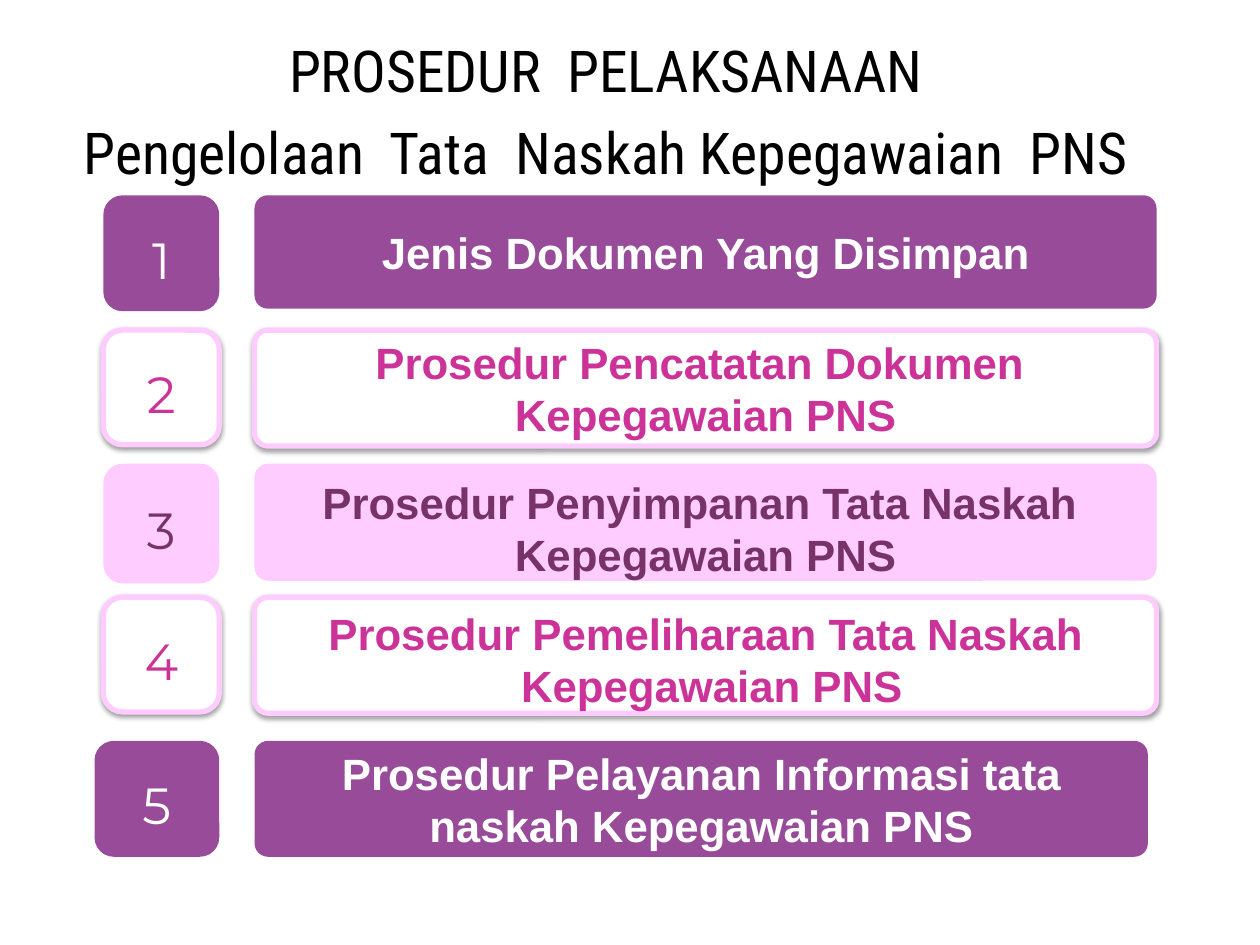
from lxml.etree import SubElement
from pptx import Presentation
from pptx.dml.color import RGBColor
from pptx.enum.shapes import MSO_SHAPE
from pptx.enum.text import MSO_ANCHOR, PP_ALIGN
from pptx.oxml.ns import qn
from pptx.util import Inches, Pt

BLACK = RGBColor(0x00, 0x00, 0x00)
WHITE = RGBColor(0xFF, 0xFF, 0xFF)
PURPLE = RGBColor(0x98, 0x4B, 0x99)
PINK = RGBColor(0xFF, 0xCC, 0xFF)
ROSE = RGBColor(0xCC, 0x33, 0x99)
PLUM = RGBColor(0x77, 0x33, 0x68)

# style: fill, text colour, outlined
DARK = (PURPLE, WHITE, False)
PALE = (PINK, PLUM, False)
OPEN = (WHITE, ROSE, True)

NUM_LEFT, NUM_WIDTH = 0.82, 0.92
BAR_LEFT, BAR_WIDTH = 2.02, 7.16

# top, number height, bar height, style, extra top inset, lines
STEPS = [
    (1.55, 0.92, 0.9, DARK, 0, ["Jenis Dokumen Yang Disimpan"]),
    (2.62, 0.91, 0.92, OPEN, 0,
     ["Prosedur Pencatatan Dokumen ", "Kepegawaian PNS"]),
    (3.68, 0.95, 0.93, PALE, 0.09,
     ["Prosedur Penyimpanan Tata Naskah ", "Kepegawaian PNS"]),
    (4.74, 0.91, 0.92, OPEN, 0.06,
     ["Prosedur Pemeliharaan Tata Naskah", " Kepegawaian PNS"]),
    (5.88, 0.92, 0.92, DARK, 0,
     ["Prosedur Pelayanan Informasi tata naskah Kepegawaian PNS"]),
]


def write(shape, lines, *, font, size, color, bold=False, spacing=None,
          anchor=MSO_ANCHOR.MIDDLE, inset=(0.1, 0.05), extra=0):
    frame = shape.text_frame
    frame.word_wrap = True
    frame.vertical_anchor = anchor
    side, edge = inset
    frame.margin_left = frame.margin_right = Inches(side)
    frame.margin_top = Inches(edge + extra)
    frame.margin_bottom = Inches(edge)
    for i, line in enumerate(lines):
        para = frame.add_paragraph() if i else frame.paragraphs[0]
        para.text = line
        para.alignment = PP_ALIGN.CENTER
        if spacing:
            para.line_spacing = spacing
        for run in para.runs:
            run.font.name = font
            run.font.size = Pt(size)
            run.font.bold = bold
            run.font.color.rgb = color


def add_shadow(shape):
    effects = shape._element.spPr.find(qn("a:effectLst"))
    outer = SubElement(effects, qn("a:outerShdw"), blurRad=str(Pt(3.1)),
                       dist=str(Pt(1.6)), dir="5400000", rotWithShape="0")
    color = SubElement(outer, qn("a:srgbClr"), val=str(BLACK))
    SubElement(color, qn("a:alpha"), val="38000")


def add_box(slide, left, top, width, height, curve, style):
    fill, _, outlined = style
    box = slide.shapes.add_shape(
        MSO_SHAPE.ROUNDED_RECTANGLE,
        Inches(left), Inches(top), Inches(width), Inches(height))
    box.adjustments[0] = curve
    box.shadow.inherit = False
    box.fill.solid()
    box.fill.fore_color.rgb = fill
    if outlined:
        box.line.color.rgb = PINK
        box.line.width = Pt(3)
        add_shadow(box)
    else:
        box.line.fill.background()
    return box


def add_step(slide, number, top, num_height, bar_height, style, extra, lines):
    color = style[1]
    # The last step is set a little further left than the others.
    shift = 0.07 if number == len(STEPS) else 0
    bar = add_box(slide, BAR_LEFT, top, BAR_WIDTH - shift, bar_height,
                  0.117, style)
    write(bar, lines, font="Arial", size=25, color=color, bold=True,
          extra=extra)
    badge = add_box(slide, NUM_LEFT - shift, top, NUM_WIDTH + shift,
                    num_height, 0.167, style)
    write(badge, [str(number)], font="Montserrat", size=29, color=color,
          spacing=1.18)


def add_title(slide):
    box = slide.shapes.add_textbox(
        Inches(0.23), Inches(0.14), Inches(9.16), Inches(1.4))
    text = "PROSEDUR  PELAKSANAAN\vPengelolaan  Tata  Naskah Kepegawaian  PNS"
    write(box, [text], font="Roboto Condensed", size=33, color=BLACK,
          spacing=1.18, anchor=MSO_ANCHOR.TOP, inset=(0.09, 0.04))


def main():
    deck = Presentation()
    deck.slide_width, deck.slide_height = Inches(10), Inches(7.5)
    slide = deck.slides.add_slide(deck.slide_layouts[6])
    add_title(slide)
    for number, step in enumerate(STEPS, 1):
        add_step(slide, number, *step)
    deck.save("out.pptx")


if __name__ == "__main__":
    main()
